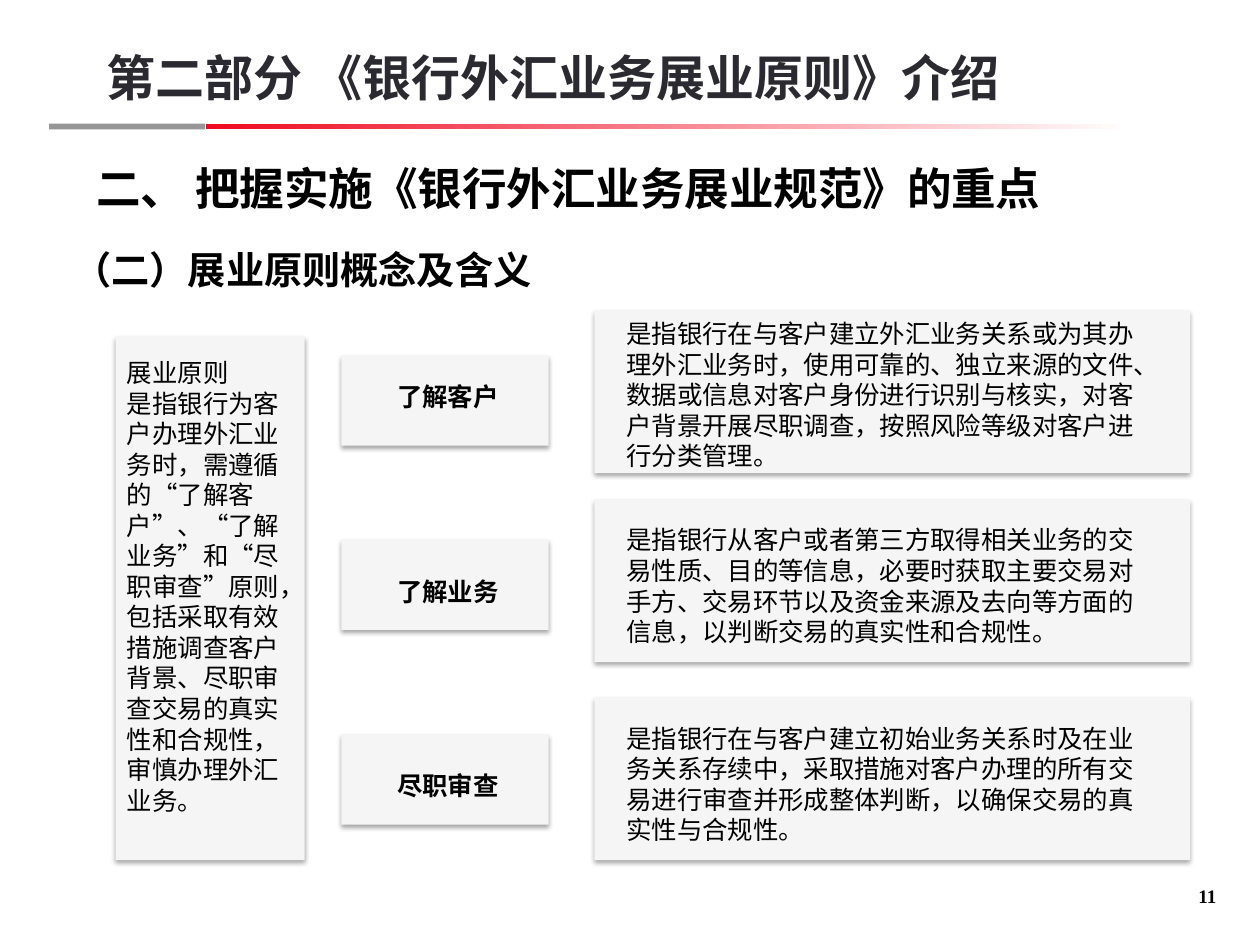
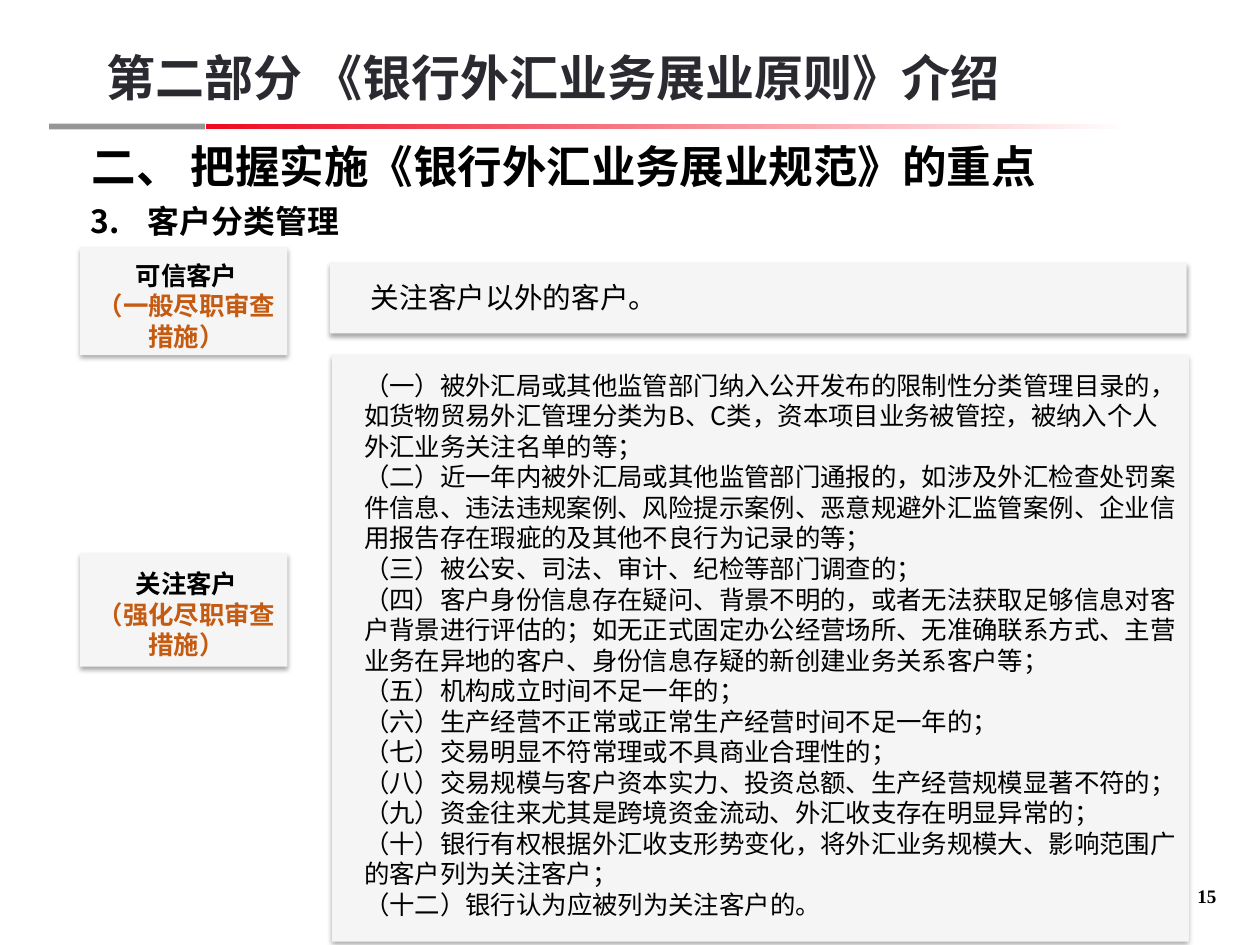
"""Build two slides on the foreign exchange due diligence principles."""
from dataclasses import dataclass

from lxml.etree import SubElement
from pptx import Presentation
from pptx.dml.color import RGBColor
from pptx.enum.shapes import MSO_SHAPE
from pptx.enum.text import MSO_ANCHOR, MSO_AUTO_SIZE, PP_ALIGN
from pptx.oxml.ns import qn
from pptx.util import Inches, Pt


@dataclass(frozen=True)
class Theme:
    font: str = "Noto Sans CJK SC"
    number_font: str = "Times New Roman"
    ink: str = "000000"
    heading: str = "2B2A30"
    accent: str = "C55A11"
    card: str = "F5F5F5"
    band: str = "969696"
    band_start: str = "EE0A20"
    band_end: str = "FFFFFF"
    heading_size: float = 30.8
    title_size: int = 28
    section_size: int = 24
    list_size: int = 20
    lead_size: int = 18
    text_size: int = 16
    number_size: int = 12
    line_factor: float = 1.2


theme = Theme()


def write(shape, box, lines, size, bold=False, align=PP_ALIGN.LEFT, anchor=MSO_ANCHOR.TOP,
          color=theme.ink, accent=None, font=theme.font, margins=(0, 0, 0, 0)):
    """Place a shape and fill it with lines; accent colours the lines after the first."""
    shape.left, shape.top, shape.width, shape.height = map(Inches, box)
    left, top, right, bottom = map(Inches, margins)
    frame_format = {"word_wrap": True, "auto_size": MSO_AUTO_SIZE.NONE, "vertical_anchor": anchor,
                    "margin_left": left, "margin_top": top,
                    "margin_right": right, "margin_bottom": bottom}
    paragraph_format = {"alignment": align, "space_before": Pt(0),
                        "line_spacing": Pt(round(size * theme.line_factor, 1))}
    font_format = {"size": Pt(size), "bold": bold, "name": font}
    frame = shape.text_frame
    for name, value in frame_format.items():
        setattr(frame, name, value)
    for index, line in enumerate(lines):
        paragraph = frame.add_paragraph() if index else frame.paragraphs[0]
        for name, value in paragraph_format.items():
            setattr(paragraph, name, value)
        run = paragraph.add_run()
        run.text = line
        for name, value in font_format.items():
            setattr(run.font, name, value)
        run.font.color.rgb = RGBColor.from_string(accent if accent and index else color)
    for properties in shape.element.iter(qn("a:rPr")):
        SubElement(properties, qn("a:ea"), typeface=font)


def add_card(slide, card_box, text_box, lines, size=theme.text_size, **text_format):
    """Group a shadowed card with its text."""
    group = slide.shapes.add_group_shape()
    card = group.shapes.add_shape(MSO_SHAPE.RECTANGLE, *map(Inches, card_box))
    card.fill.solid()
    card.fill.fore_color.rgb = RGBColor.from_string(theme.card)
    card.line.fill.background()
    card.shadow.inherit = False
    effects = card.element.spPr.find(qn("a:effectLst"))
    shadow = SubElement(effects, qn("a:outerShdw"), blurRad=str(Pt(3.1)), dist=str(Pt(1.8)),
                        dir="5400000", algn="t", rotWithShape="0")
    shadow_color = SubElement(shadow, qn("a:srgbClr"), val=theme.ink)
    SubElement(shadow_color, qn("a:alpha"), val="35000")
    text = group.shapes.add_textbox(*map(Inches, text_box))
    write(text, text_box, lines, size, margins=(0.1, 0.05, 0.1, 0.05), **text_format)


presentation = Presentation()
presentation.slide_width = Inches(11)
presentation.slide_height = Inches(8.25)
layout = presentation.slide_layouts[1]

pages = [
    {"number": "11", "title_at": (0.84, 1.12), "section": "（二）展业原则概念及含义",
     "section_box": (0.64, 2.15, 9.43, 0.55), "section_size": theme.section_size, "start": None},
    {"number": "15", "title_at": (0.8, 0.93), "section": "客户分类管理",
     "section_box": (0.79, 1.76, 9.43, 0.48), "section_size": theme.list_size, "start": 3},
]
slides = []
for page in pages:
    slide = presentation.slides.add_slide(layout)
    slides.append(slide)
    write(slide.shapes.title, (*page["title_at"], 9.46, 0.75),
          ["二、 把握实施《银行外汇业务展业规范》的重点"], theme.title_size, bold=True,
          anchor=MSO_ANCHOR.BOTTOM)
    number_box = (10.17, 7.5, 0.45, 0.42)
    number = slide.shapes.add_textbox(*map(Inches, number_box))
    write(number, number_box, [page["number"]], theme.number_size, bold=True,
          align=PP_ALIGN.RIGHT, anchor=MSO_ANCHOR.BOTTOM, font=theme.number_font)
    heading_box = (0.84, 0.18, 9.46, 0.75)
    heading = slide.shapes.add_textbox(*map(Inches, heading_box))
    write(heading, heading_box, ["第二部分 《银行外汇业务展业原则》介绍"], theme.heading_size,
          bold=True, anchor=MSO_ANCHOR.BOTTOM, color=theme.heading, margins=(0.09, 0, 0, 0))
    body = slide.placeholders[1]
    write(body, page["section_box"], [page["section"]], page["section_size"], bold=True)
    indent = Inches(0.5) if page["start"] else 0
    for properties in body.element.iter(qn("a:pPr")):
        properties.set("marL", str(indent))
        properties.set("indent", str(-indent))
        if page["start"]:
            bullet_color = SubElement(properties, qn("a:buClr"))
            SubElement(bullet_color, qn("a:srgbClr"), val=theme.ink)
            SubElement(properties, qn("a:buFont"), typeface=theme.font)
            SubElement(properties, qn("a:buAutoNum"), type="arabicPeriod",
                       startAt=str(page["start"]))
        else:
            SubElement(properties, qn("a:buNone"))

principles_slide, customers_slide = slides

for left, width in [(0.43, 1.36), (1.8, 8.08)]:
    band = principles_slide.shapes.add_shape(
        MSO_SHAPE.RECTANGLE, Inches(left), Inches(1.08), Inches(width), Inches(0.05))
    band.shadow.inherit = False
    band.line.fill.background()
    band.fill.solid()
    band.fill.fore_color.rgb = RGBColor.from_string(theme.band)
    layout.shapes.element.append(band.element)
band.fill.gradient()
band.fill.gradient_angle = 0
for stop, color in zip(band.fill.gradient_stops, (theme.band_start, theme.band_end)):
    stop.color.rgb = RGBColor.from_string(color)

principles = [
    ("了解客户", 3.1, 3.28, 2.71, 2.73,
     "是指银行在与客户建立外汇业务关系或为其办理外汇业务时，使用可靠的、独立来源的文件、数据或信息"
     "对客户身份进行识别与核实，对客户背景开展尽职调查，按照风险等级对客户进行分类管理。"),
    ("了解业务", 4.71, 4.98, 4.36, 4.53,
     "是指银行从客户或者第三方取得相关业务的交易性质、目的等信息，必要时获取主要交易对手方、"
     "交易环节以及资金来源及去向等方面的信息，以判断交易的真实性和合规性。"),
    ("尽职审查", 6.41, 6.67, 6.09, 6.26,
     "是指银行在与客户建立初始业务关系时及在业务关系存续中，采取措施对客户办理的所有交易进行审查"
     "并形成整体判断，以确保交易的真实性与合规性。"),
]
for name, label_top, name_top, card_top, text_top, meaning in principles:
    add_card(principles_slide, (2.98, label_top, 1.81, 0.79), (3.03, name_top, 1.76, 0.37),
             [name], bold=True, align=PP_ALIGN.CENTER)
    add_card(principles_slide, (5.19, card_top, 5.2, 1.42), (5.37, text_top, 4.83, 1.45), [meaning])
add_card(principles_slide, (1.01, 2.94, 1.65, 4.57), (1.01, 3.07, 1.65, 4.36), [
    "展业原则",
    "是指银行为客户办理外汇业务时，需遵循的“了解客户”、“了解业务”和“尽职审查”原则，"
    "包括采取有效措施调查客户背景、尽职审查交易的真实性和合规性，审慎办理外汇业务。",
])

customer_types = [
    ("可信客户", "（一般尽职审查措施）", 2.16, 0.94, 2.22),
    ("关注客户", "（强化尽职审查措施）", 4.83, 0.99, 4.91),
]
for name, measure, card_top, card_height, text_top in customer_types:
    add_card(customers_slide, (0.7, card_top, 1.81, card_height), (0.75, text_top, 1.76, 0.91),
             [name, measure], bold=True, align=PP_ALIGN.CENTER, accent=theme.accent)
add_card(customers_slide, (2.88, 2.29, 7.48, 0.62), (3.14, 2.39, 6.96, 0.4),
         ["关注客户以外的客户。"], size=theme.lead_size)
add_card(customers_slide, (2.9, 3.1, 7.48, 5.12), (3.08, 3.18, 7.3, 4.95), [
    "（一）被外汇局或其他监管部门纳入公开发布的限制性分类管理目录的，如货物贸易外汇管理分类为B、C类，"
    "资本项目业务被管控，被纳入个人外汇业务关注名单的等；",
    "（二）近一年内被外汇局或其他监管部门通报的，如涉及外汇检查处罚案件信息、违法违规案例、"
    "风险提示案例、恶意规避外汇监管案例、企业信用报告存在瑕疵的及其他不良行为记录的等；",
    "（三）被公安、司法、审计、纪检等部门调查的；",
    "（四）客户身份信息存在疑问、背景不明的，或者无法获取足够信息对客户背景进行评估的；"
    "如无正式固定办公经营场所、无准确联系方式、主营业务在异地的客户、身份信息存疑的新创建业务关系客户等；",
    "（五）机构成立时间不足一年的；",
    "（六）生产经营不正常或正常生产经营时间不足一年的；",
    "（七）交易明显不符常理或不具商业合理性的；",
    "（八）交易规模与客户资本实力、投资总额、生产经营规模显著不符的；",
    "（九）资金往来尤其是跨境资金流动、外汇收支存在明显异常的；",
    "（十）银行有权根据外汇收支形势变化，将外汇业务规模大、影响范围广的客户列为关注客户；",
    "（十二）银行认为应被列为关注客户的。",
])

presentation.save("out.pptx")
